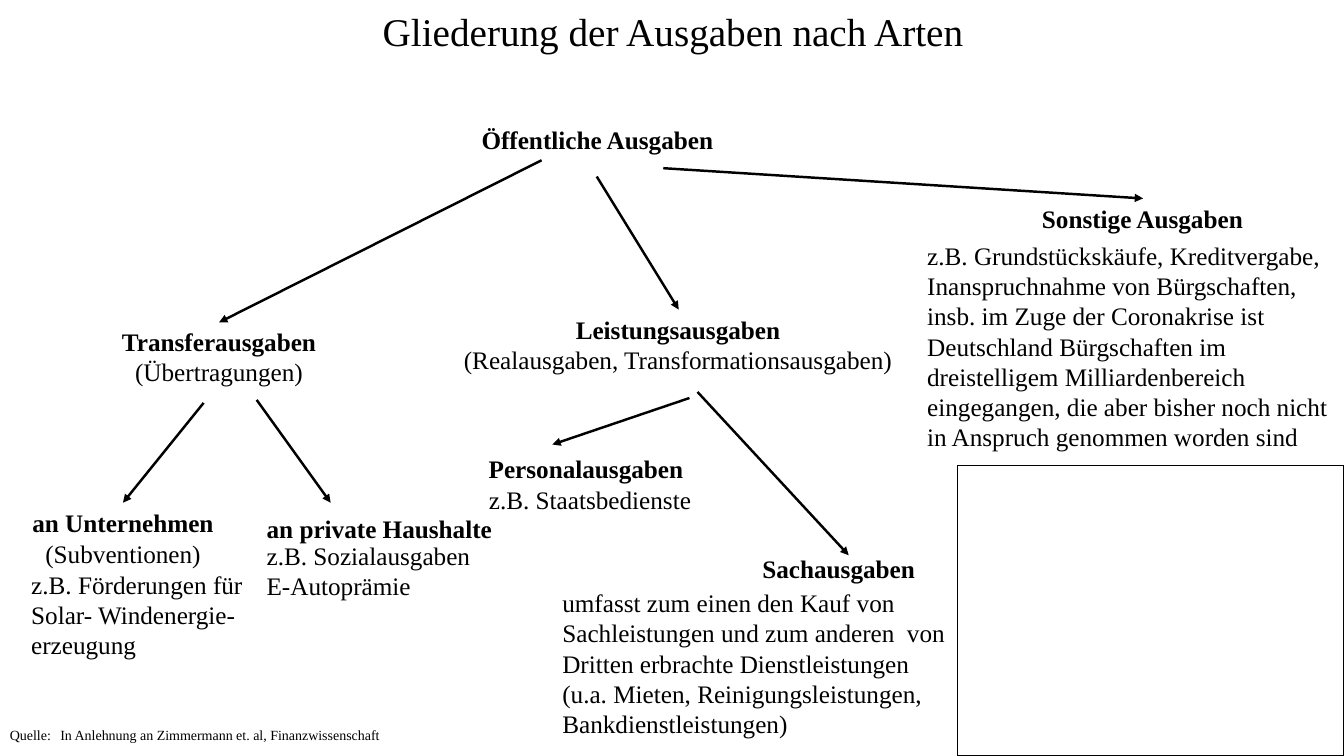
from typing import NamedTuple

from lxml import etree
from pptx import Presentation
from pptx.dml.color import RGBColor
from pptx.enum.shapes import MSO_CONNECTOR, MSO_SHAPE
from pptx.enum.text import MSO_ANCHOR, MSO_AUTO_SIZE, PP_ALIGN
from pptx.oxml.ns import qn
from pptx.util import Inches, Pt

BLACK = RGBColor(0, 0, 0)
FONT = "Times New Roman"
LEFT, CENTER = PP_ALIGN.LEFT, PP_ALIGN.CENTER
TOP, MIDDLE = MSO_ANCHOR.TOP, MSO_ANCHOR.MIDDLE
STRAIGHT = MSO_CONNECTOR.STRAIGHT
RECTANGLE = MSO_SHAPE.RECTANGLE
NO_AUTOFIT = MSO_AUTO_SIZE.NONE

SLIDE_WIDTH, SLIDE_HEIGHT = Inches(13.33), Inches(7.5)
COLUMN, ROW = SLIDE_WIDTH / 100, SLIDE_HEIGHT / 100
ONE_LINE, TWO_LINES, THREE_LINES = 5.3, 9.5, 13.5


class Region(NamedTuple):
    """Area of the slide whose parts are placed in columns and rows from its corner."""
    left: float
    top: float

    def point(self, column, row):
        return round((self.left + column) * COLUMN), round((self.top + row) * ROW)

    def box(self, column, row, width, height):
        return *self.point(column, row), round(width * COLUMN), round(height * ROW)


def write_text(shape, lines, size=18, bold_first=False, align=LEFT, anchor=TOP, wrap=False):
    frame = shape.text_frame
    frame.auto_size = NO_AUTOFIT
    frame.word_wrap = wrap
    frame.vertical_anchor = anchor
    for index, line in enumerate(lines):
        paragraph = frame.paragraphs[0] if index == 0 else frame.add_paragraph()
        paragraph.text = line
        paragraph.alignment = align
        paragraph.font.name = FONT
        paragraph.font.size = Pt(size)
        paragraph.font.bold = bold_first and index == 0
        paragraph.font.color.rgb = BLACK


def add_text(slide, box, *lines, **text_format):
    write_text(slide.shapes.add_textbox(*box), lines, **text_format)


def add_heading(slide, box, *lines, wrap=False):
    add_text(slide, box, *lines, bold_first=True, align=CENTER, wrap=wrap)


def add_arrow(slide, start, end):
    arrow = slide.shapes.add_connector(STRAIGHT, *start, *end)
    arrow.line.color.rgb = BLACK
    arrow.line.width = Pt(1.75)
    etree.SubElement(arrow.line._get_or_add_ln(), qn("a:tailEnd"), type="triangle")
    etree.SubElement(arrow._element.spPr, qn("a:effectLst"))


def add_title(slide, region):
    title = slide.shapes.title
    title.left, title.top, title.width, title.height = region.box(0.15, 0.1, 99.85, 7.9)
    write_text(title, ["Gliederung der Ausgaben nach Arten"],
               size=28, align=CENTER, anchor=MIDDLE, wrap=True)


def add_root(slide, region):
    add_heading(slide, region.box(0, 0, 18.9, ONE_LINE), "Öffentliche Ausgaben")
    add_arrow(slide, region.point(5.3, 5.45), region.point(-18.7, 26.9))
    add_arrow(slide, region.point(9.4, 7.6), region.point(15.5, 25.2))
    add_arrow(slide, region.point(14.35, 6.5), region.point(50.05, 10.5))


def add_transfers(slide, region):
    add_heading(slide, region.box(6.75, 0, 16.1, TWO_LINES),
                "Transferausgaben", "(Übertragungen)")
    add_arrow(slide, region.point(13.65, 10.8), region.point(7.65, 24))
    add_arrow(slide, region.point(17.6, 10.4), region.point(23.1, 24))
    add_heading(slide, region.box(0.08, 24, 15.15, TWO_LINES),
                "an Unternehmen", "(Subventionen)")
    add_text(slide, region.box(0.08, 32.15, 17.4, THREE_LINES),
             "z.B. Förderungen für", "Solar- Windenergie-", "erzeugung")
    add_heading(slide, region.box(17.5, 24.7, 18.45, ONE_LINE), "an private Haushalte")
    add_text(slide, region.box(17.6, 28.3, 16.8, TWO_LINES),
             "z.B. Sozialausgaben", "E-Autoprämie")


def add_services(slide, region):
    add_heading(slide, region.box(0, 0, 34, TWO_LINES),
                "Leistungsausgaben", "(Realausgaben, Transformationsausgaben)")
    add_arrow(slide, region.point(17.85, 11.75), region.point(7.65, 17.9))
    add_arrow(slide, region.point(18.45, 10.95), region.point(29.7, 32.55))
    add_heading(slide, region.box(2.1, 18.4, 16.1, ONE_LINE), "Personalausgaben")
    add_text(slide, region.box(2.1, 22.55, 16.7, ONE_LINE), "z.B. Staatsbedienste", align=CENTER)
    add_heading(slide, region.box(20.1, 31.6, 17.7, 6), "Sachausgaben", wrap=True)
    add_text(slide, region.box(7.65, 36.15, 34.6, 14.3),
             "umfasst zum einen den Kauf von Sachleistungen und zum anderen  von "
             "Dritten erbrachte Dienstleistungen",
             "(u.a. Mieten, Reinigungsleistungen, Bankdienstleistungen)", wrap=True)


def add_other(slide, region):
    add_heading(slide, region.box(0.8, 0, 31.9, ONE_LINE), "Sonstige Ausgaben", wrap=True)
    add_text(slide, region.box(0, 4.8, 31.75, 29.6),
             "z.B. Grundstückskäufe, Kreditvergabe,",
             "Inanspruchnahme von Bürgschaften,",
             "insb. im Zuge der Coronakrise ist Deutschland Bürgschaften im "
             "dreistelligem Milliardenbereich eingegangen, die aber bisher noch "
             "nicht in Anspruch genommen worden sind", wrap=True)
    frame = slide.shapes.add_shape(RECTANGLE, *region.box(3, 35.3, 28.75, 38.4))
    frame.shadow.inherit = False
    frame.fill.background()
    frame.line.color.rgb = BLACK
    frame.line.width = Pt(1)


def add_source(slide, region):
    add_text(slide, region.box(0, 0, 99.8, 3.9),
             "Quelle:\tIn Anlehnung an Zimmermann et. al, Finanzwissenschaft",
             size=10, wrap=True)


def main():
    presentation = Presentation()
    presentation.slide_width, presentation.slide_height = SLIDE_WIDTH, SLIDE_HEIGHT
    slide = presentation.slides.add_slide(presentation.slide_layouts.get_by_name("Title Only"))
    add_title(slide, Region(0, 0))
    add_root(slide, Region(35, 15.75))
    add_transfers(slide, Region(1.5, 42.5))
    add_services(slide, Region(33.45, 40.9))
    add_other(slide, Region(68.25, 26.3))
    add_source(slide, Region(0, 95.5))
    presentation.save("out.pptx")


if __name__ == "__main__":
    main()
